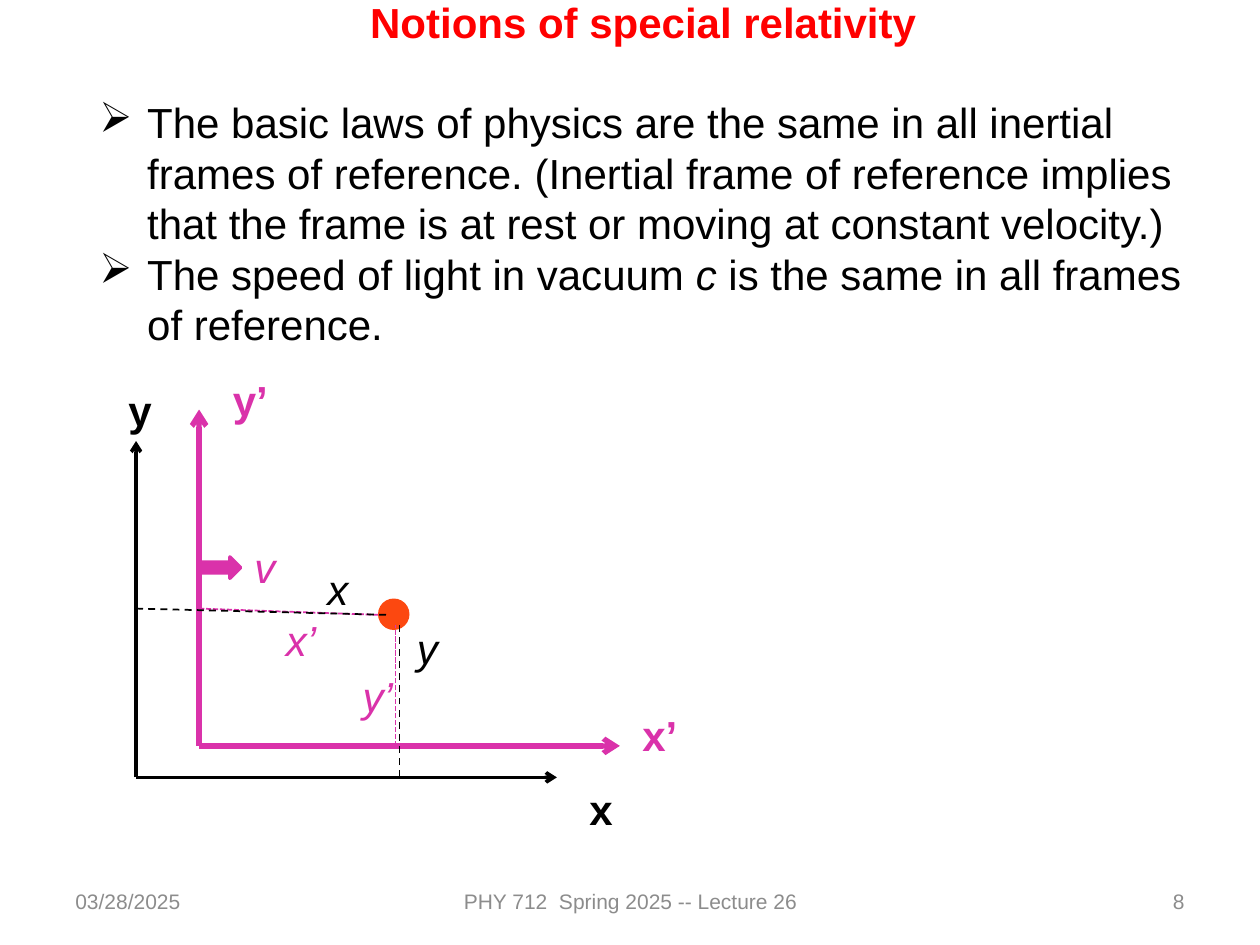
from dataclasses import dataclass

from pptx import Presentation
from pptx import util as u
from pptx.dml.color import RGBColor
from pptx.enum import dml, shapes, text
from pptx.oxml import ns
from lxml import etree


@dataclass(frozen=True)
class Theme:
    font: str = "Arial"
    black: str = "000000"
    grey: str = "8C8C8C"
    red: str = "FF0000"
    moving: str = "DA32AA"
    particle: str = "FC4810"
    body_size: float = 24
    footer_size: float = 12
    leading: float = 1.2


@dataclass(frozen=True)
class Label:
    words: str
    left: float
    top: float
    color: str
    bold: bool = False
    italic: bool = False


@dataclass(frozen=True)
class Frame:
    """Axes of one reference frame, drawn from a common origin."""
    x: float
    y: float
    color: str
    weight: float


@dataclass(frozen=True)
class Guide:
    start: tuple[float, float]
    end: tuple[float, float]
    color: str
    dash: dml.MSO_LINE


@dataclass(frozen=True)
class FooterItem:
    words: str
    left: float
    width: float
    align: text.PP_ALIGN


THEME = Theme()
AXIS_X, AXIS_Y = 3.34, 2.67
REST = Frame(1.08, 6.17, THEME.black, 2)
MOVING = Frame(1.58, 5.92, THEME.moving, 3)

LABELS = [
    Label("x", 4.58, 6.17, THEME.black, bold=True),
    Label("y", 0.92, 3, THEME.black, bold=True),
    Label("y’", 1.75, 2.92, THEME.moving, bold=True),
    Label("x’", 5, 5.58, THEME.moving, bold=True),
    Label("v", 1.92, 4.25, THEME.moving, italic=True),
    Label("x’", 2.17, 4.83, THEME.moving, italic=True),
    Label("y’", 2.78, 5.27, THEME.moving, italic=True),
    Label("y", 3.21, 4.89, THEME.black, italic=True),
    Label("x", 2.5, 4.42, THEME.black, italic=True),
]
GUIDES = [
    Guide((MOVING.x, 4.83), (3, 4.88), THEME.moving, dml.MSO_LINE.SQUARE_DOT),
    Guide((3.14, MOVING.y), (3.14, 4.96), THEME.moving, dml.MSO_LINE.SQUARE_DOT),
    Guide((3.17, REST.y), (3.17, 4.96), THEME.black, dml.MSO_LINE.DASH),
    Guide((REST.x, 4.83), (3.08, 4.88), THEME.black, dml.MSO_LINE.DASH),
]
FOOTER = [
    FooterItem("03/28/2025", 0.5, 2.33, text.PP_ALIGN.LEFT),
    FooterItem("PHY 712  Spring 2025 -- Lecture 26", 3.42, 3.17, text.PP_ALIGN.CENTER),
    FooterItem("8", 7.17, 2.33, text.PP_ALIGN.RIGHT),
]
# Each postulate is a list of (words, italic) spans.
POSTULATES = [
    [("The basic laws of physics are the same in all inertial frames of reference. "
      "(Inertial frame of reference implies that the frame is at rest or moving at "
      "constant velocity.)", False)],
    [("The speed of light in vacuum ", False), ("c", True),
     (" is the same in all frames of reference.", False)],
]


def style(para, size: float, color: str, bold: bool = False, italic: bool = False) -> None:
    para.font.name = THEME.font
    para.font.size = u.Pt(size)
    para.font.color.rgb = RGBColor.from_string(color)
    para.font.bold = bold
    para.font.italic = italic
    para.line_spacing = u.Pt(size * THEME.leading)


def add_box(page, left: float, top: float, width: float, height: float):
    box = page.shapes.add_textbox(*map(u.Inches, (left, top, width, height)))
    box.text_frame.word_wrap = True
    return box


def add_title(page) -> None:
    title = page.shapes.title
    title.left, title.top = u.Inches(0.69), u.Inches(-0.08)
    title.width, title.height = u.Inches(8.83), u.Inches(0.5)
    title.text_frame.vertical_anchor = text.MSO_ANCHOR.TOP
    title.text_frame.text = "Notions of special relativity"
    para = title.text_frame.paragraphs[0]
    para.alignment = text.PP_ALIGN.CENTER
    style(para, THEME.body_size, THEME.red, bold=True)


def add_bullet(para) -> None:
    props = para._p.get_or_add_pPr()
    props.set("marL", str(u.Inches(0.38)))
    props.set("indent", str(u.Inches(-0.38)))
    bullet = etree.Element(ns.qn("a:buChar"), char="➢")
    props.insert_element_before(bullet, "a:tabLst", "a:defRPr", "a:extLst")


def add_postulates(page) -> None:
    frame = add_box(page, 0.69, 0.72, 8.83, 2.13).text_frame
    for index, spans in enumerate(POSTULATES):
        para = frame.add_paragraph() if index else frame.paragraphs[0]
        style(para, THEME.body_size, THEME.black)
        add_bullet(para)
        for words, italic in spans:
            span = para.add_run()
            span.text = words
            span.font.italic = italic


def add_line(page, start: tuple[float, float], end: tuple[float, float],
             color: str, weight: float):
    line = page.shapes.add_connector(
        shapes.MSO_CONNECTOR.STRAIGHT, *map(u.Inches, (*start, *end)))
    line.line.color.rgb = RGBColor.from_string(color)
    line.line.width = u.Pt(weight)
    etree.SubElement(line._element.spPr, ns.qn("a:effectLst"))
    return line


def add_axes(page, frame: Frame) -> None:
    origin = (frame.x, frame.y)
    for tip in ((frame.x, frame.y - AXIS_Y), (frame.x + AXIS_X, frame.y)):
        axis = add_line(page, origin, tip, frame.color, frame.weight)
        etree.SubElement(axis.line._get_or_add_ln(), ns.qn("a:tailEnd"), type="arrow")


def add_guide(page, guide: Guide) -> None:
    line = add_line(page, guide.start, guide.end, guide.color, 1)
    line.line.dash_style = guide.dash


def add_solid(page, kind: shapes.MSO_SHAPE, left: float, top: float,
              width: float, height: float, color: str):
    solid = page.shapes.add_shape(kind, *map(u.Inches, (left, top, width, height)))
    solid.shadow.inherit = False
    solid.fill.solid()
    solid.fill.fore_color.rgb = RGBColor.from_string(color)
    solid.line.fill.background()
    return solid


def add_label(page, label: Label) -> None:
    para = add_box(page, label.left, label.top, 0.5, 0.5).text_frame.paragraphs[0]
    para.text = label.words
    style(para, THEME.body_size, label.color, label.bold, label.italic)


def add_footer_item(page, item: FooterItem) -> None:
    frame = add_box(page, item.left, 6.95, item.width, 0.4).text_frame
    frame.vertical_anchor = text.MSO_ANCHOR.MIDDLE
    para = frame.paragraphs[0]
    para.text = item.words
    para.alignment = item.align
    style(para, THEME.footer_size, THEME.grey)


def main() -> None:
    deck = Presentation()
    deck.slide_width, deck.slide_height = u.Inches(10), u.Inches(7.5)
    page = deck.slides.add_slide(deck.slide_layouts.get_by_name("Title Only"))
    for item in FOOTER:
        add_footer_item(page, item)
    add_title(page)
    add_postulates(page)
    for frame in (REST, MOVING):
        add_axes(page, frame)
    velocity = add_solid(page, shapes.MSO_SHAPE.RIGHT_ARROW,
                         MOVING.x, 4.42, 0.33, 0.17, THEME.moving)
    velocity.line.color.rgb = RGBColor.from_string(THEME.moving)
    velocity.line.width = u.Pt(2)
    add_solid(page, shapes.MSO_SHAPE.OVAL, 3, 4.75, 0.25, 0.25, THEME.particle)
    for guide in GUIDES:
        add_guide(page, guide)
    for label in LABELS:
        add_label(page, label)
    deck.save("out.pptx")


if __name__ == "__main__":
    main()
